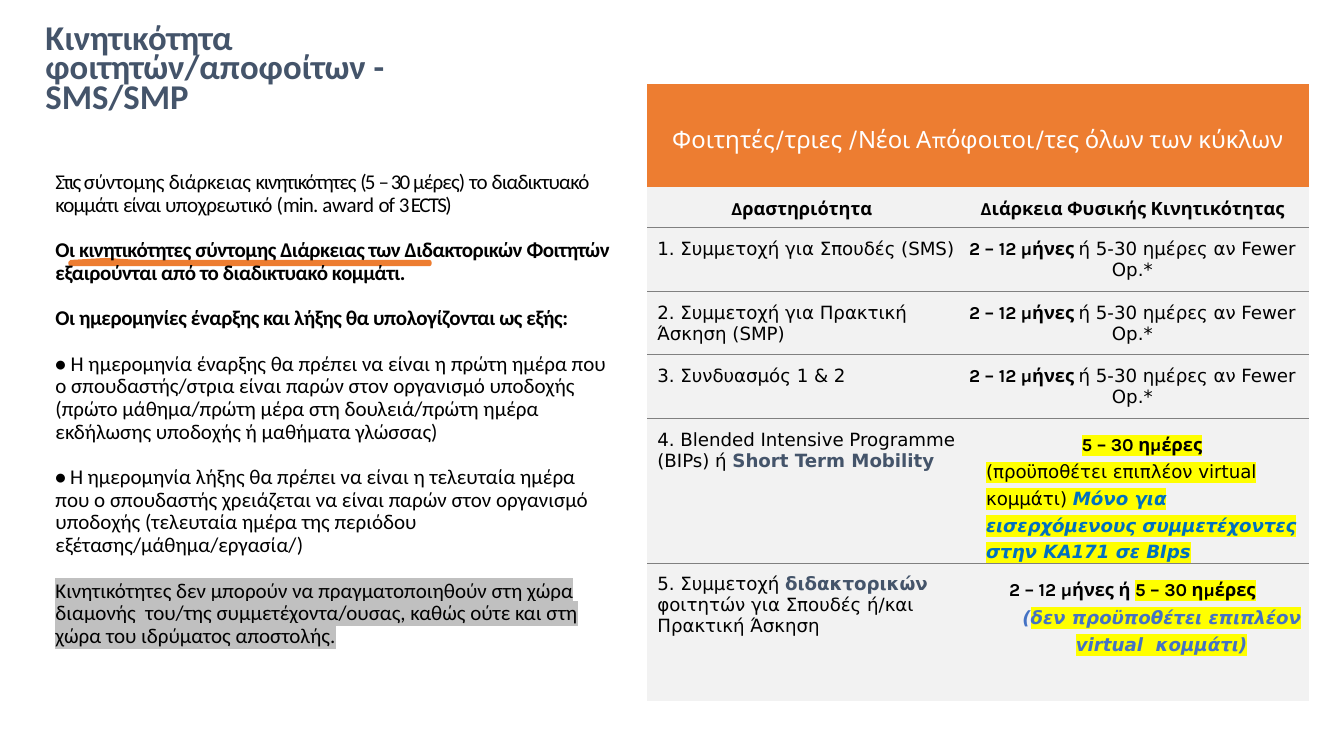
from lxml.etree import SubElement
from pptx import Presentation
from pptx.dml.color import RGBColor
from pptx.enum.text import MSO_ANCHOR, MSO_AUTO_SIZE, PP_ALIGN
from pptx.oxml.ns import qn
from pptx.util import Inches, Pt

hue = RGBColor.from_string
LEFT, MID = PP_ALIGN.LEFT, PP_ALIGN.CENTER
ORANGE, SLATE, GREY, YELLOW = "ED7D31", "44546A", "808080", "FFFF00"


def write(para, text, size, face, tint="000000", bold=False, slant=False, mark=None, track=0):
    run = para.add_run()
    run.text = text
    font = run.font
    font.size = Pt(size)
    font.bold = bold
    font.italic = slant
    font.color.rgb = hue(tint)
    props = run._r.get_or_add_rPr()
    if track:
        props.set("spc", str(round(track * 100)))
    if mark:
        light = SubElement(props, qn("a:highlight"))
        SubElement(light, qn("a:srgbClr")).set("val", mark)
    font.name = face


def layout(para, align, before, pitch, indent=0):
    para.alignment = align
    para.space_before = Pt(before)
    para.space_after = Pt(0)
    para.line_spacing = pitch
    props = para._p.get_or_add_pPr()
    props.set("marL", str(Inches(indent)))
    props.set("indent", "0")


deck = Presentation()
deck.slide_width = Inches(13.33)
deck.slide_height = Inches(7.5)
slide = deck.slides.add_slide(deck.slide_layouts[1])
title, body = slide.placeholders

for shape, box in ((title, (0.35, 0.14, 4.86, 1.05)), (body, (0.45, 1.19, 5.72, 5.82))):
    shape.left, shape.top, shape.width, shape.height = [Inches(n) for n in box]
    shape.text_frame.word_wrap = True
    shape.text_frame.auto_size = MSO_AUTO_SIZE.NONE

title.text_frame.vertical_anchor = MSO_ANCHOR.BOTTOM
para = title.text_frame.paragraphs[0]
layout(para, LEFT, 0, 0.7)
para.space_after = Pt(6)
write(para, "Κινητικότητα φοιτητών/αποφοίτων - SMS/SMP", 24.8, "Calibri", SLATE, True)

tight = dict(track=-0.3)
strong = dict(bold=True, track=-0.3)
notes = [
    [(text, dict(track=track)) for text, track in (
        ("Στις ", -1.5), ("σύντομης διάρκειας ", -0.2), ("κινητικότητες ", -0.8),
        ("(5 ", -1.2), ("– ", -2.2), ("30 ", -1.3), ("μέρες) ", -0.6), ("το ", -0.5),
        ("διαδικτυακό κομμάτι ", -0.6), ("είναι ", -0.7), ("υποχρεωτικό ", -0.3),
        ("(", -0.1), ("min. ", -0.6), ("award ", -0.2), ("of ", -0.7), ("3 ECTS)", -1.2))],
    [("Οι κινητικότητες σύντομης Διάρκειας των Διδακτορικών Φοιτητών "
      "εξαιρούνται από το διαδικτυακό κομμάτι.", strong)],
    [("Οι ημερομηνίες έναρξης και λήξης θα υπολογίζονται ως εξής:", strong)],
    [("•", strong),
     (" Η ημερομηνία έναρξης θα πρέπει να είναι η πρώτη ημέρα που ο σπουδαστής/στρια "
      "είναι παρών στον οργανισμό υποδοχής (πρώτο μάθημα/πρώτη μέρα στη δουλειά/πρώτη "
      "ημέρα εκδήλωσης υποδοχής ή μαθήματα γλώσσας)", {})],
    [("• ", strong), ("Η ", tight),
     ("ημερομηνία λήξης θα πρέπει να είναι η τελευταία ημέρα που ο σπουδαστής χρειάζεται "
      "να είναι παρών στον οργανισμό υποδοχής (τελευταία ημέρα της περιόδου "
      "εξέτασης/μάθημα/εργασία/", {}), (")", tight)],
    [("Κινητικότητες δεν μπορούν να πραγματοποιηθούν στη χώρα διαμονής  του/της "
      "συμμετέχοντα/ουσας, καθώς ούτε και στη χώρα του ιδρύματος αποστολής.",
      dict(mark="C0C0C0"))],
]
frame = body.text_frame
frame.margin_top = Inches(0.51)
for i, runs in enumerate(notes):
    para = frame.add_paragraph() if i else frame.paragraphs[0]
    layout(para, LEFT, 16.2 if i else 0, 0.9)
    SubElement(para._p.get_or_add_pPr(), qn("a:buNone"))
    for text, style in runs:
        write(para, text, 15, "Calibri", **style)

upper = [(0.7, 2.6), (1.05, 2.58), (1.38, 2.6), (2.09, 2.6), (2.84, 2.6), (3.59, 2.6), (4.26, 2.6)]
lower = [(4.26, 2.62), (3.48, 2.62), (2.7, 2.62), (1.99, 2.62), (1.45, 2.62), (0.7, 2.62)]
first, *rest = [(Inches(x), Inches(y)) for x, y in upper + lower]
path = slide.shapes.build_freeform(*first)
path.add_line_segments(rest, close=True)
stroke = path.convert_to_shape()
stroke.shadow.inherit = False
stroke.fill.solid()
stroke.fill.fore_color.rgb = hue(ORANGE)
stroke.line.color.rgb = hue(ORANGE)
stroke.line.width = Pt(3)
body.element.addprevious(stroke.element)

karla = dict(size=13, face="Karla", bold=True)
plain = dict(size=13, face="DejaVu Sans")
navy = dict(plain, tint=SLATE, bold=True)
lit = dict(karla, mark=YELLOW)
blue = dict(plain, tint="4472C4", bold=True, slant=True)
span = [(MID, 4.8, 1.0, 0, [("2 – 12 μήνες ", karla), ("ή 5-30 ημέρες αν Fewer Op.*", plain)])]
tasks = [
    ([("1. Συμμετοχή για Σπουδές (SMS)", plain)], span),
    ([("2. Συμμετοχή για Πρακτική Άσκηση (SMP)", plain)], span),
    ([("3. Συνδυασμός 1 & 2", plain)], span),
    ([("4. Blended Intensive Programme (BIPs) ή ", plain), ("Short Term Mobility", navy)],
     [(MID, 3.4, Pt(19.1), 0.19, [("5 – 30 ημέρες", lit)]),
      (LEFT, 0, Pt(19.1), 0.3, [
          ("(προϋποθέτει επιπλέον virtual κομμάτι) ", dict(plain, mark=YELLOW)),
          ("Μόνο για εισερχόμενους συμμετέχοντες στην ΚΑ171 σε BIps",
           dict(blue, tint="0070C0", mark=YELLOW))])]),
    ([("5. Συμμετοχή ", plain), ("διδακτορικών", navy),
      (" φοιτητών για Σπουδές ή/και Πρακτική Άσκηση", plain)],
     [(MID, 3.4, Pt(19.1), 0, [("2 – 12 μήνες ή ", karla), ("5 – 30 ημέρες", lit)]),
      (MID, 0.6, Pt(19.2), 0.58, [
          ("(", blue),
          ("δεν προϋποθέτει επιπλέον virtual  κομμάτι)", dict(blue, mark=YELLOW))])]),
]
banner = ("Φοιτητές/τριες /Νέοι Απόφοιτοι/τες όλων των κύκλων",
          dict(size=17, face="Karla", tint="FFFFFF"))
heads = ("Δραστηριότητα", "Διάρκεια Φυσικής Κινητικότητας")
rows = [[[(MID, 3.2, 1.0, 0, [banner])], []],
        [[(MID, 3.2, 1.0, 0, [(head, karla)])] for head in heads]]
rows += [[[(LEFT, 3.2, 1.0, 0.1, task)], time] for task, time in tasks]

tall = (1.03, 0.4, 0.63, 0.63, 0.63, 1.05, 1.37)
wide = (3.06, 3.5)
table = slide.shapes.add_table(len(tall), len(wide), Inches(6.42), Inches(0.83),
                               Inches(sum(wide)), Inches(sum(tall))).table
table.first_row = False
table.horz_banding = False
for col, width in zip(table.columns, wide):
    col.width = Inches(width)
table.cell(0, 0).merge(table.cell(0, 1))

for r, row in enumerate(rows):
    table.rows[r].height = Inches(tall[r])
    for c, paras in enumerate(row):
        cell = table.cell(r, c)
        cell.margin_left = cell.margin_right = cell.margin_bottom = 0
        cell.margin_top = Inches(0.11)
        cell.vertical_anchor = MSO_ANCHOR.TOP if r else MSO_ANCHOR.MIDDLE
        props = cell._tc.get_or_add_tcPr()
        for side, drawn in (("L", False), ("R", False), ("T", r > 1), ("B", 0 < r < len(rows) - 1)):
            edge = SubElement(props, qn("a:ln" + side), w=str(Pt(0.75)))
            if drawn:
                SubElement(SubElement(edge, qn("a:solidFill")), qn("a:srgbClr")).set("val", GREY)
            else:
                SubElement(edge, qn("a:noFill"))
        cell.fill.solid()
        cell.fill.fore_color.rgb = hue("F2F2F2" if r else ORANGE)
        for i, (align, before, pitch, indent, runs) in enumerate(paras):
            para = cell.text_frame.add_paragraph() if i else cell.text_frame.paragraphs[0]
            layout(para, align, before, pitch, indent)
            for text, style in runs:
                write(para, text, **style)

deck.save("out.pptx")
